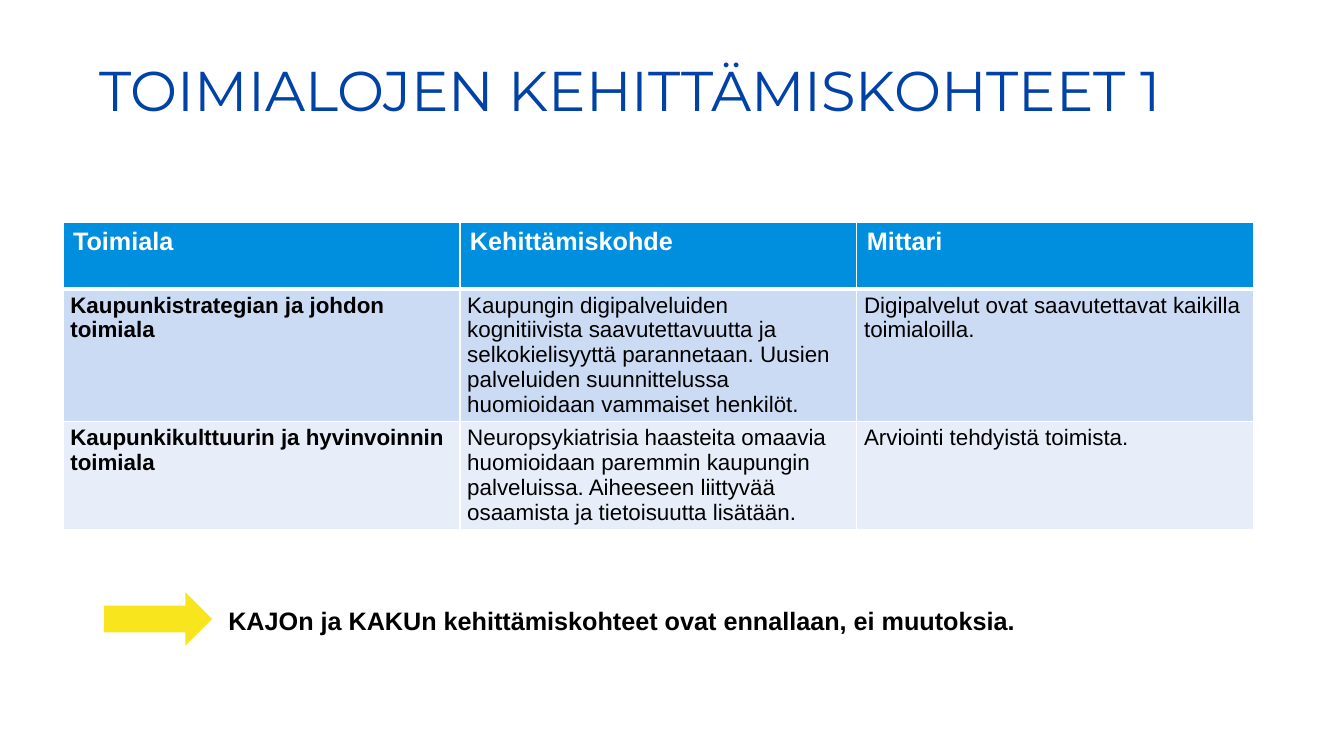
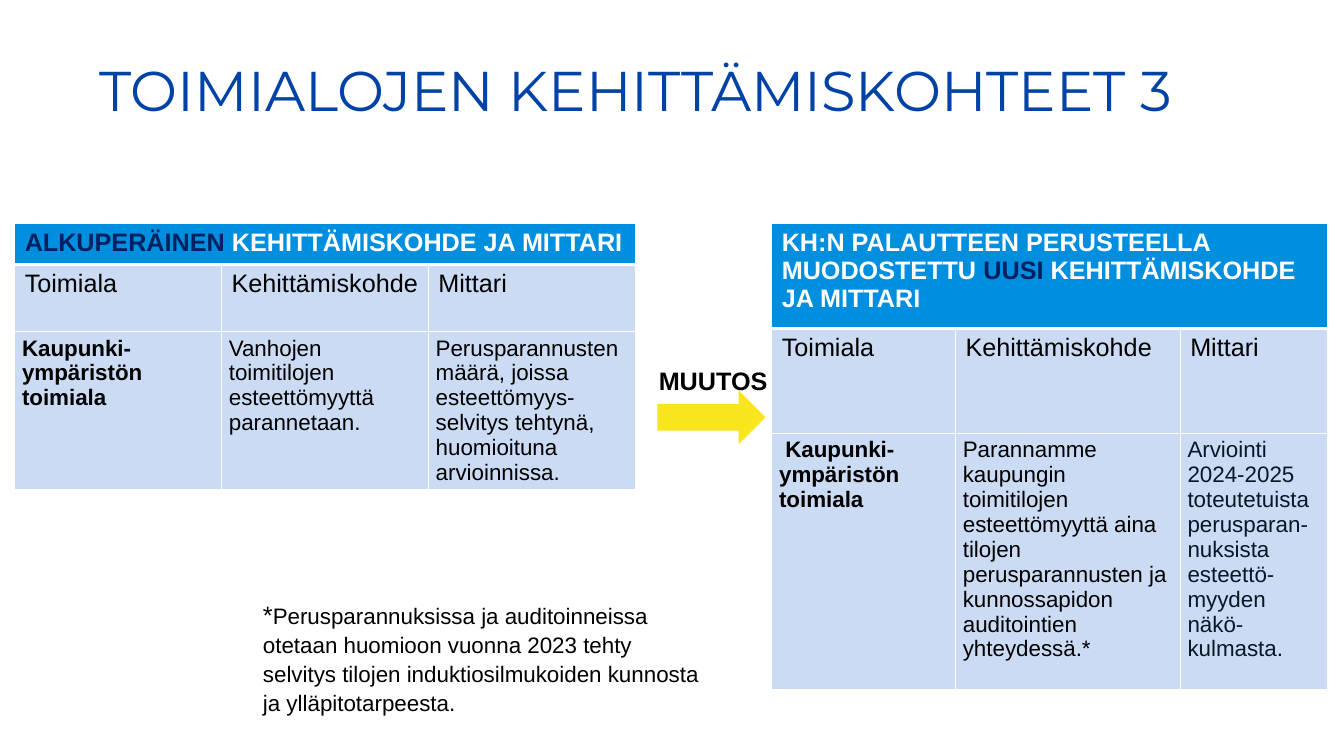
import pptx
import pptx.dml.color
import pptx.enum.shapes
import pptx.enum.text
import pptx.oxml
import pptx.oxml.ns
import pptx.util

PX = 9525  # EMU in one px, 96 px to the inch
BLUE, SKY, NAVY, INK = "0042A6", "008EDF", "002060", "071927"
PALE, PALER, YELLOW = "CBDBF3", "E7EEF9", "F9E51E"
WHITE, BLACK = "FFFFFF", "000000"
HEADINGS = ["Toimiala", "Kehittämiskohde", "Mittari"]


def px(n):
    return pptx.util.Emu(n * PX)


def rgb(value):
    return pptx.dml.color.RGBColor.from_string(value)


class Deck:
    def __init__(self):
        self.prs = pptx.Presentation()
        self.prs.slide_width, self.prs.slide_height = px(1280), px(720)

    # Text styling
    def style(self, r, size, color=BLACK, bold=False, font="Arial"):
        r.font.name, r.font.size = font, pptx.util.Pt(size)
        r.font.bold, r.font.color.rgb = bold, rgb(color)

    def add_runs(self, p, parts, **look):
        """Each part is a text, or a tuple of text and the look it changes."""
        for part in [parts] if isinstance(parts, str) else parts:
            text, changes = (part, {}) if isinstance(part, str) else part
            r = p.add_run()
            r.text = text
            self.style(r, **{**look, **changes})

    # Slide with its title
    def slide(self, title):
        self.s = self.prs.slides.add_slide(self.prs.slide_layouts[5])
        sp = self.s.shapes.title
        sp.left, sp.top, sp.width, sp.height = px(85), px(56), px(1081), px(66)
        tf = sp.text_frame
        tf.text = title
        tf.word_wrap = True
        tf.auto_size = pptx.enum.text.MSO_AUTO_SIZE.NONE
        tf.vertical_anchor = pptx.enum.text.MSO_ANCHOR.MIDDLE
        p = tf.paragraphs[0]
        p.alignment = pptx.enum.text.PP_ALIGN.LEFT
        p.line_spacing = 0.9
        self.style(p.runs[0], 40, BLUE, font="Montserrat")

    # Table and its cells
    def borders(self, cell, top, bottom):
        tc_pr = cell._tc.get_or_add_tcPr()
        ns = pptx.oxml.ns.nsdecls("a")
        sides = {"lnL": 1, "lnR": 1, "lnT": top, "lnB": bottom}
        for i, (side, width) in enumerate(sides.items()):
            tc_pr.insert(i, pptx.oxml.parse_xml(
                f'<a:{side} {ns} w="{width * 12700}"><a:solidFill>'
                f'<a:srgbClr val="{WHITE}"/></a:solidFill></a:{side}>'))

    def table(self, x, y, cols, heights, rows, fills, banner=False):
        """A banner is a first row merged over all columns."""
        table = self.s.shapes.add_table(
            len(rows), len(cols), px(x), px(y), px(sum(cols)), px(sum(heights))).table
        for col, width in zip(table.columns, cols):
            col.width = px(width)
        body = 2 if banner else 1  # first row of body text
        for i, (row, height, fill) in enumerate(zip(rows, heights, fills)):
            table.rows[i].height = px(height)
            for j in range(len(cols)):
                cell = table.cell(i, j)
                cell.fill.solid()
                cell.fill.fore_color.rgb = rgb(fill)
                self.borders(cell, 3 if i == 1 else 1, 3 if i == 0 else 1)
                if i >= body:
                    cell.margin_left = cell.margin_right = px(7)
                    cell.margin_top = cell.margin_bottom = px(4)
                if j < len(row):
                    self.add_runs(cell.text_frame.paragraphs[0], row[j],
                                  size=16 if i >= body else 18,
                                  color=BLACK if i else WHITE,
                                  bold=i == 0 or (i >= body and j == 0))
        if banner:
            table.cell(0, 0).merge(table.cell(0, len(cols) - 1))

    # Free text
    def note(self, x, y, w, h, parts, **look):
        tf = self.s.shapes.add_textbox(px(x), px(y), px(w), px(h)).text_frame
        tf.word_wrap = True
        tf.paragraphs[0].line_spacing = 1.07
        self.add_runs(tf.paragraphs[0], parts, **look)

    def arrow(self, x, y):
        sp = self.s.shapes.add_shape(
            pptx.enum.shapes.MSO_SHAPE.RIGHT_ARROW, px(x), px(y), px(103), px(51))
        sp.shadow.inherit = False
        sp.fill.solid()
        sp.fill.fore_color.rgb = rgb(YELLOW)
        sp.line.fill.background()


def main():
    deck = Deck()

    # Unchanged targets
    deck.slide("TOIMIALOJEN KEHITTÄMISKOHTEET 1")
    deck.table(60, 212, [378] * 3, [63, 126, 102], [
        HEADINGS,
        ["Kaupunkistrategian ja johdon toimiala",
         "Kaupungin digipalveluiden kognitiivista saavutettavuutta ja selkokielisyyttä "
         "parannetaan. Uusien palveluiden suunnittelussa huomioidaan vammaiset henkilöt.",
         "Digipalvelut ovat saavutettavat kaikilla toimialoilla."],
        ["Kaupunkikulttuurin ja hyvinvoinnin toimiala",
         "Neuropsykiatrisia haasteita omaavia huomioidaan paremmin kaupungin palveluissa. "
         "Aiheeseen liittyvää osaamista ja tietoisuutta lisätään.",
         "Arviointi tehdyistä toimista."],
    ], [SKY, PALE, PALER])
    deck.note(208, 570, 998, 38,
              "KAJOn ja KAKUn kehittämiskohteet ovat ennallaan, ei muutoksia.",
              size=18, bold=True)
    deck.arrow(99, 564)

    # Original and new target
    deck.slide("TOIMIALOJEN KEHITTÄMISKOHTEET 3")
    fills = [SKY, PALE, PALE]
    deck.table(14, 213, [197] * 3, [39, 64, 150], [
        [[("ALKUPERÄINEN", {"color": NAVY}), " KEHITTÄMISKOHDE JA MITTARI"]],
        HEADINGS,
        ["Kaupunki-ympäristön toimiala",
         "Vanhojen toimitilojen esteettömyyttä parannetaan.",
         "Perusparannusten määrä, joissa esteettömyys-selvitys tehtynä, "
         "huomioituna arvioinnissa."],
    ], fills, banner=True)
    deck.table(735, 213, [175, 214, 140], [100, 100, 244], [
        [["KH:N PALAUTTEEN PERUSTEELLA MUODOSTETTU ", ("UUSI", {"color": NAVY}),
          " KEHITTÄMISKOHDE JA MITTARI"]],
        HEADINGS,
        [" Kaupunki-ympäristön toimiala",
         "Parannamme kaupungin toimitilojen esteettömyyttä aina tilojen perusparannusten "
         "ja kunnossapidon auditointien yhteydessä.*",
         [("Arviointi 2024-2025 toteutetuista perusparan-nuksista esteettö-myyden "
           "näkö-kulmasta.", {"color": INK})]],
    ], fills, banner=True)
    deck.arrow(626, 372)
    deck.note(241, 564, 435, 116, [
        ("*", {"size": 18}),
        "Perusparannuksissa ja auditoinneissa otetaan huomioon vuonna 2023 tehty selvitys "
        "tilojen induktiosilmukoiden kunnosta ja ylläpitotarpeesta."], size=16)
    deck.note(618, 341, 132, 38, "MUUTOS", size=18, bold=True)

    deck.prs.save("out.pptx")


if __name__ == "__main__":
    main()
